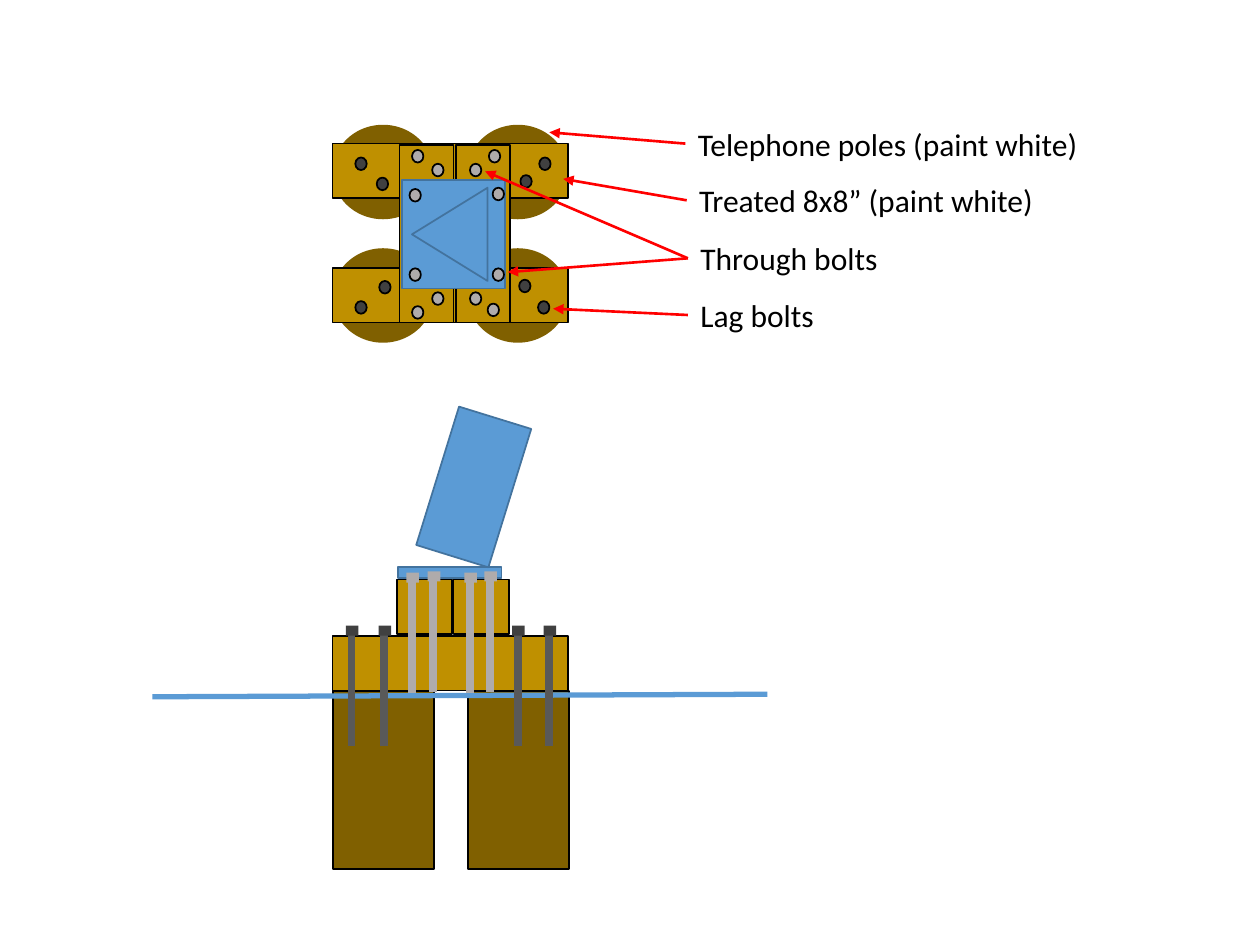
import pptx
import pptx.util
import pptx.dml.color
import pptx.enum.shapes
import pptx.enum.text
import pptx.oxml

KIND = pptx.enum.shapes.MSO_SHAPE
POLE, BEAM, STEEL, EDGE = "806000", "BF9000", "5B9BD5", "43739E"
DARK, SHAFT, GRAY, BLACK, RED = "404040", "595959", "AFABAB", "000000", "FF0000"
CELL = pptx.util.Inches(10) // 1000


def grid(*cells):
    """Turn counts of grid cells, a thousand to the slide's width, into lengths."""
    return [round(cell * CELL) for cell in cells]


def tint(code):
    """Make a colour from a hex string."""
    return pptx.dml.color.RGBColor.from_string(code)


def block(shapes, box, fill, edge=None, kind=KIND.RECTANGLE, turn=0):
    """Draw a filled shape in a box of grid cells."""
    shape = shapes.add_shape(kind, *grid(*box))
    shape.shadow.inherit = False
    shape.rotation = turn
    shape.fill.solid()
    shape.fill.fore_color.rgb = tint(fill)
    if edge:
        shape.line.color.rgb = tint(edge)
        shape.line.width = pptx.util.Pt(1)
    else:
        shape.line.fill.background()


def stroke(shapes, ends, color, width, arrow=False):
    """Draw a straight line, with an arrowhead at its end if wanted."""
    line = shapes.add_connector(pptx.enum.shapes.MSO_CONNECTOR.STRAIGHT, *grid(*ends))
    line.line.color.rgb = tint(color)
    line.line.width = pptx.util.Pt(width)
    space = pptx.oxml.ns.nsdecls("a")
    if arrow:
        head = pptx.oxml.parse_xml(f'<a:tailEnd {space} type="triangle"/>')
        line.line._get_or_add_ln().append(head)
    line._element.spPr.append(pptx.oxml.parse_xml(f"<a:effectLst {space}/>"))


def dots(shapes, spots, fill):
    """Draw bolt heads seen from above."""
    for left, top in spots:
        block(shapes, (left, top, 9, 10), fill, BLACK, KIND.OVAL)


def bolt(shapes, left, top, shaft, head):
    """Draw a bolt seen from the side as one group."""
    group = shapes.add_group_shape().shapes
    stroke(group, (left, top, left, top + 89), shaft, 4.5)
    block(group, (left - 4.5, top - 6.5, 10, 8), head)


def label(shapes, left, top, width, words):
    """Write one line of label text."""
    box = shapes.add_textbox(*grid(left, top, width, 40))
    frame = box.text_frame
    frame.word_wrap = False
    frame.auto_size = pptx.enum.text.MSO_AUTO_SIZE.SHAPE_TO_FIT_TEXT
    frame.text = words
    font = frame.paragraphs[0].font
    font.name, font.size = "Calibri", pptx.util.Pt(18)
    font.color.rgb = tint(BLACK)


def plan(shapes):
    """Draw the stand from above."""
    for top in (99, 197):
        for left in (264, 371):
            block(shapes, (left, top, 80, 75), POLE, kind=KIND.OVAL)
    for top in (114, 213):
        block(shapes, (264, top, 187, 43), BEAM, BLACK)
    for left in (313, 268):
        block(shapes, (left, 164, 141, 43), BEAM, BLACK, turn=90)
    block(shapes, (319, 143, 82, 86), STEEL, EDGE)
    block(shapes, (320, 156, 74, 60), STEEL, EDGE, KIND.ISOSCELES_TRIANGLE, 270)
    dots(shapes, [(282, 125), (299, 141), (282, 239), (301, 223),
                  (428, 125), (413, 139), (427, 239), (412, 222)], DARK)
    dots(shapes, [(388, 119), (373, 130), (343, 232), (327, 243),
                  (373, 232), (343, 130), (327, 119), (387, 241),
                  (391, 213), (391, 149), (325, 213), (325, 150)], GRAY)


def side(shapes):
    """Draw the stand from the side."""
    block(shapes, (264, 505, 187, 43), BEAM, BLACK)
    for left in (315, 360):
        block(shapes, (left, 460, 44, 43), BEAM, BLACK)
    for left in (341, 234):
        block(shapes, (left, 579, 141, 80), POLE, BLACK, turn=90)
    stroke(shapes, (121, 553, 609, 551), STEEL, 3)
    block(shapes, (316, 450, 82, 9), STEEL, EDGE)
    block(shapes, (346, 329, 60, 115), STEEL, EDGE, turn=17.2)
    for left in (436, 411, 305, 279):
        bolt(shapes, left, 503, SHAFT, DARK)
    for left, top in ((389, 460), (373, 461), (344, 460), (327, 461)):
        bolt(shapes, left, top, GRAY, GRAY)


def notes(shapes):
    """Write the labels and point each at its parts."""
    rows = [
        (544, 94, 325, "Telephone poles (paint white)", [(436, 105)]),
        (545, 139, 288, "Treated 8x8” (paint white)", [(447, 142)]),
        (546, 185, 162, "Through bolts", [(403, 216), (385, 136)]),
        (546, 230, 111, "Lag bolts", [(439, 245)]),
    ]
    for left, top, width, words, tips in rows:
        label(shapes, left, top, width, words)
        for tip in tips:
            stroke(shapes, (left, top + 20, *tip), RED, 1.5, True)


def main():
    """Build and save the slide."""
    deck = pptx.Presentation()
    deck.slide_width, deck.slide_height = grid(1000, 750)
    shapes = deck.slides.add_slide(deck.slide_layouts[6]).shapes
    plan(shapes)
    side(shapes)
    notes(shapes)
    deck.save("out.pptx")


if __name__ == "__main__":
    main()
